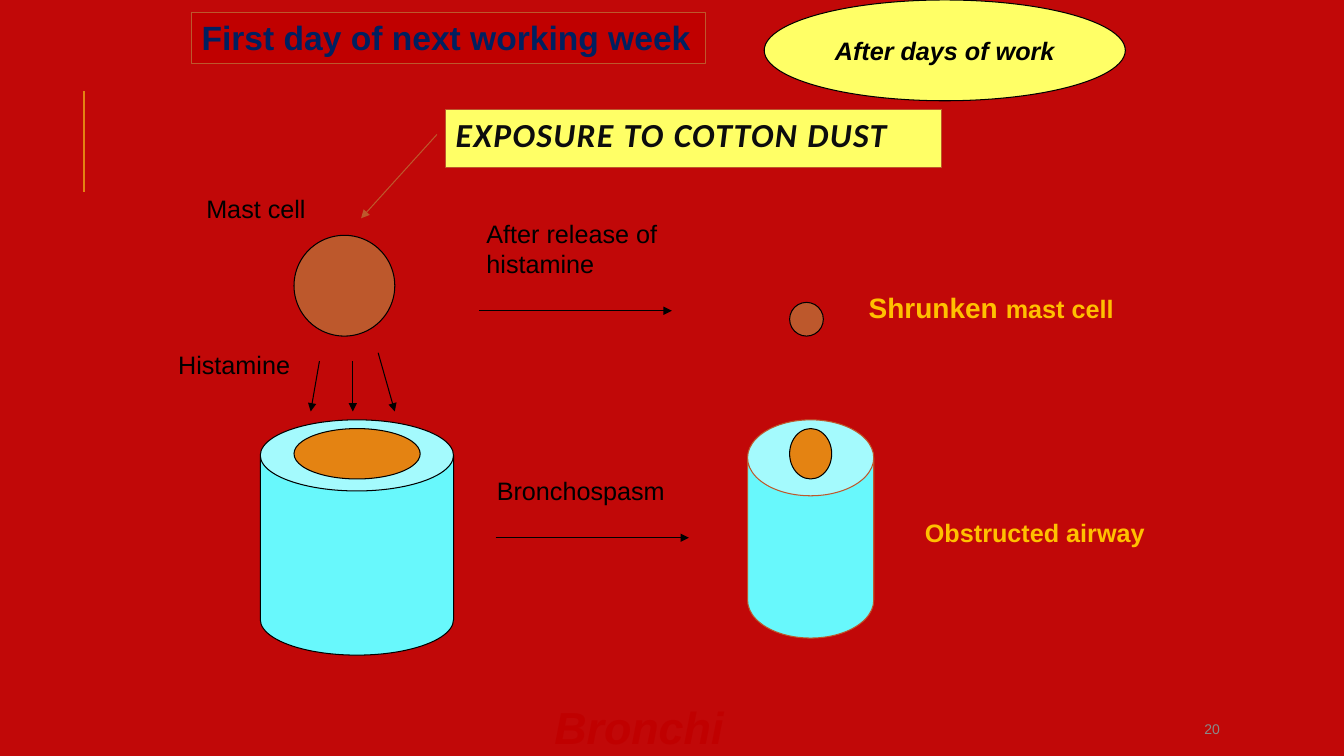
from lxml import etree
from pptx import Presentation
from pptx.dml.color import RGBColor
from pptx.enum.shapes import MSO_CONNECTOR, MSO_SHAPE
from pptx.enum.text import MSO_ANCHOR, PP_ALIGN
from pptx.oxml.ns import qn
from pptx.util import Cm, Pt

OVAL, CAN, RECT = MSO_SHAPE.OVAL, MSO_SHAPE.CAN, MSO_SHAPE.RECTANGLE
LINE = MSO_CONNECTOR.STRAIGHT
MIDDLE, TOP = MSO_ANCHOR.MIDDLE, MSO_ANCHOR.TOP
LEFT, CENTER = PP_ALIGN.LEFT, PP_ALIGN.CENTER
rgb = RGBColor.from_string

BLACK, RUST, ORANGE = "000000", "BD582C", "E48312"
AQUA, YELLOW, GOLD = "68F8FC", "FFFF66", "FFC000"


def paint(shape, fill, edge):
    shape.fill.solid()
    shape.fill.fore_color.rgb = rgb(fill)
    shape.line.color.rgb = rgb(edge)
    shape.line.width = Pt(0.75)


def write(shape, runs, color, bold=False, italic=False, font="Arial",
          align=LEFT, anchor=TOP, wrap=True):
    """Fill the first paragraph with (text, size) runs of one style."""
    frame = shape.text_frame
    frame.word_wrap = wrap
    frame.vertical_anchor = anchor
    para = frame.paragraphs[0]
    para.alignment = align
    for text, size in runs:
        run = para.add_run()
        run.text = text
        run.font.name = font
        run.font.size = Pt(size)
        run.font.bold = bold
        run.font.italic = italic
        run.font.color.rgb = rgb(color)
    return para


deck = Presentation()
deck.slide_width, deck.slide_height = Cm(33.87), Cm(19.05)
slide = deck.slides.add_slide(deck.slide_layouts[5])
slide.background.fill.solid()
slide.background.fill.fore_color.rgb = rgb("C10808")
shapes = slide.shapes

# Title
title = shapes.title
title.left, title.top, title.width, title.height = Cm(11.23), Cm(2.75), Cm(12.5), Cm(1.46)
paint(title, YELLOW, RUST)
para = write(title, [("EXPOSURE TO COTTON DUST", 24)], "0D0D0D", True, True,
             "Calibri", anchor=MIDDLE)
para.line_spacing = 0.8
para.runs[0].font._element.set("spc", "100")

# Cells, airways and captioned shapes: kind, left, top, width, height, fill, edge, can depth
figures = [
    (OVAL, 7.41, 5.93, 2.54, 2.54, RUST, BLACK, None),
    (CAN, 6.56, 10.58, 4.87, 5.93, AQUA, BLACK, 0.368),
    (OVAL, 19.9, 7.62, 0.85, 0.85, RUST, BLACK, None),
    (CAN, 18.84, 10.58, 3.18, 5.5, AQUA, RUST, 0.602),
    (OVAL, 7.41, 10.8, 3.18, 1.27, ORANGE, BLACK, None),
    (OVAL, 19.9, 10.8, 1.06, 1.27, ORANGE, BLACK, None),
    (RECT, 4.83, 0.31, 12.95, 1.29, "C00000", RUST, None),
    (OVAL, 19.26, 0, 9.1, 2.54, YELLOW, BLACK, None),
]
for kind, left, top, wide, high, fill, edge, depth in figures:
    shape = shapes.add_shape(kind, Cm(left), Cm(top), Cm(wide), Cm(high))
    shape.shadow.inherit = False
    paint(shape, fill, edge)
    if depth:
        shape.adjustments[0] = depth
    if kind == RECT:
        write(shape, [("First day of next working week", 24)], "002060", True)
    elif fill == YELLOW:
        write(shape, [("After days of work", 18)], BLACK, True, True,
              align=CENTER, anchor=MIDDLE, wrap=False)

# Side rule and arrows: start, end, colour, width, arrowhead
links = [
    (2.12, 4.83, 2.12, 2.29, ORANGE, 1.5, False),
    (12.07, 7.83, 16.93, 7.83, BLACK, 0.75, True),
    (12.49, 13.55, 17.36, 13.55, BLACK, 0.75, True),
    (9.53, 8.89, 9.95, 10.37, BLACK, 0.75, True),
    (8.89, 9.1, 8.89, 10.37, BLACK, 0.75, True),
    (8.05, 9.1, 7.83, 10.37, BLACK, 0.75, True),
    (11.01, 3.39, 9.1, 5.5, RUST, 0.75, True),
]
for x1, y1, x2, y2, color, width, head in links:
    link = shapes.add_connector(LINE, Cm(x1), Cm(y1), Cm(x2), Cm(y2))
    link.line.color.rgb = rgb(color)
    link.line.width = Pt(width)
    if head:
        etree.SubElement(link.line._get_or_add_ln(), qn("a:tailEnd"), type="triangle")
    etree.SubElement(link._element.spPr, qn("a:effectLst"))

# Labels: left, top, width, height, runs, colour, bold, italic, anchor, wrap
labels = [
    (4.95, 4.75, 4, 1.02, [("Mast cell", 18)], BLACK, False, False, TOP, False),
    (12.01, 5.38, 5.13, 1.78, [("After release of histamine", 18)], BLACK, False, False, TOP, True),
    (12.27, 11.86, 4.75, 1.02, [("Bronchospasm", 18)], BLACK, False, False, TOP, False),
    (23.06, 12.9, 6.05, 1.02, [("Obstructed airway", 18)], GOLD, True, False, TOP, False),
    (4.24, 8.69, 3.33, 1.02, [("Histamine", 18)], BLACK, False, False, TOP, False),
    (21.64, 7.19, 7.98, 1.09, [("Shrunken ", 20), ("mast cell", 18)], GOLD, True, False, TOP, True),
    (13.72, 17.5, 5, 1.55, [("Bronchi", 32)], "C00000", True, True, TOP, False),
    (30.1, 17.98, 2.69, 0.76, [("20", 10)], "898989", False, False, MIDDLE, True),
]
for left, top, wide, high, runs, color, bold, italic, anchor, wrap in labels:
    box = shapes.add_textbox(Cm(left), Cm(top), Cm(wide), Cm(high))
    write(box, runs, color, bold, italic, anchor=anchor, wrap=wrap)

deck.save("out.pptx")
